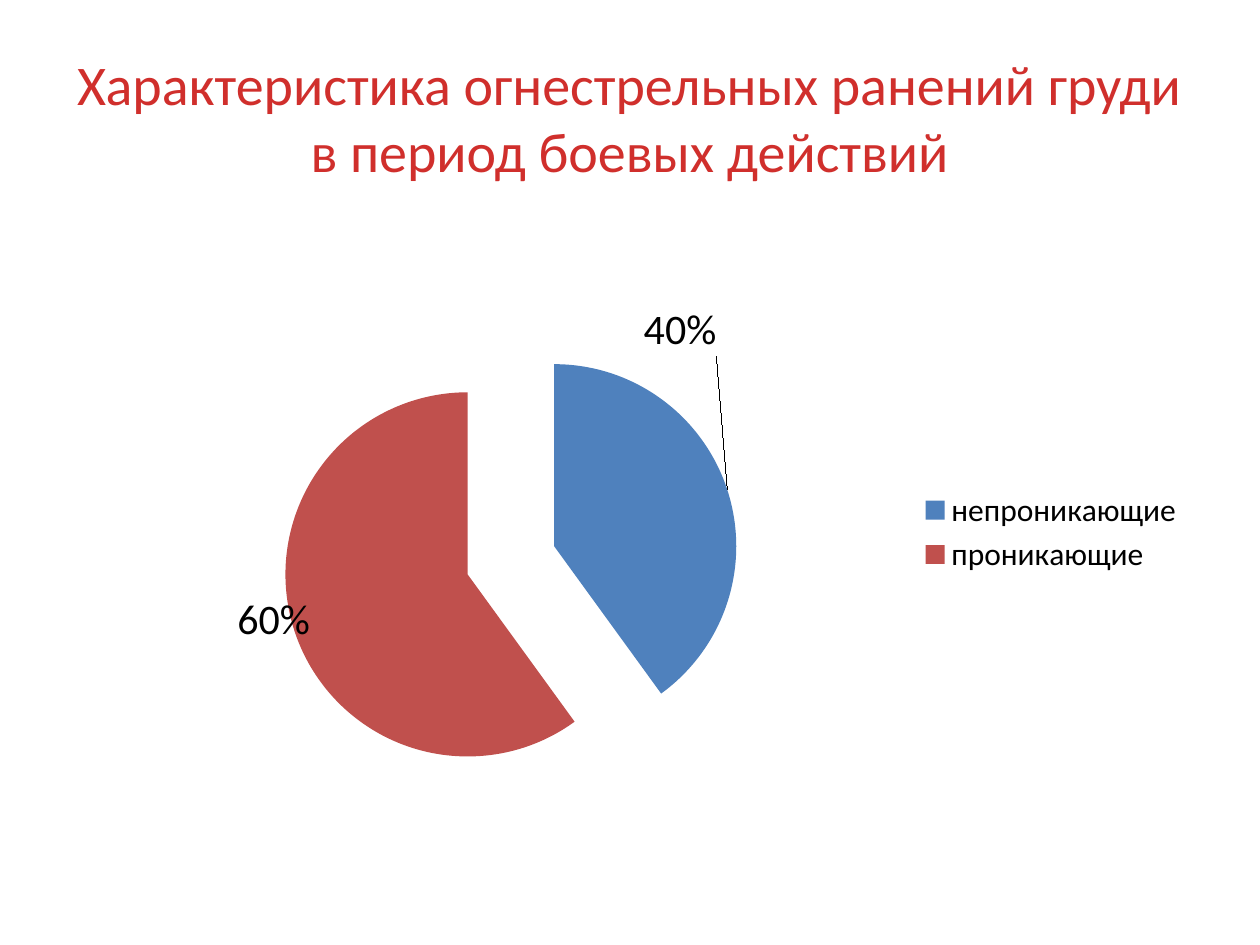
from lxml import etree
from pptx import Presentation, util as u
from pptx.chart.data import CategoryChartData
from pptx.dml.color import RGBColor
from pptx.enum import chart as ch, text
from pptx.oxml import ns


def paint(fill, hue):
    fill.solid()
    fill.fore_color.rgb = RGBColor.from_string(hue)


def place(node, **parts):
    """Fill a c:layout node with a manual layout."""
    man = etree.SubElement(node, ns.qn("c:manualLayout"))
    for tag, val in parts.items():
        etree.SubElement(man, ns.qn("c:" + tag)).set("val", str(val))


prs = Presentation()
prs.slide_width, prs.slide_height = u.Inches(10), u.Inches(7.5)
slide = prs.slides.add_slide(prs.slide_layouts[6])

# Title
box = slide.shapes.add_textbox(u.Inches(0.5), u.Inches(0.3), u.Inches(9), u.Inches(1.25))
frame = box.text_frame
frame.word_wrap = True
frame.vertical_anchor = text.MSO_ANCHOR.MIDDLE
para = frame.paragraphs[0]
para.text = "Характеристика огнестрельных ранений груди в период боевых действий"
para.alignment = text.PP_ALIGN.CENTER
para.font.name, para.font.size = "Calibri", u.Pt(32)
paint(para.font.fill, "D02F2C")

# Pie chart
data = CategoryChartData(number_format="0%")
data.categories = ["непроникающие", "проникающие"]
data.add_series("Series 1", [0.4, 0.6])
chart = slide.shapes.add_chart(
    ch.XL_CHART_TYPE.PIE, u.Inches(0.5), u.Inches(1.75), u.Inches(9), u.Inches(4.95), data
).chart
chart.has_title = False
chart.font.name, chart.font.size = "Calibri", u.Pt(18)
paint(chart.font.fill, "000000")
chart.has_legend = True
chart.legend.position = ch.XL_LEGEND_POSITION.RIGHT
chart.legend.include_in_layout = False

area = chart._chartSpace.chart.plotArea
layout = area.find(ns.qn("c:layout"))
if layout is None:
    layout = etree.Element(ns.qn("c:layout"))
    area.insert(0, layout)
place(layout, layoutTarget="inner", xMode="edge", yMode="edge", x=0.08, y=0.18, w=0.63, h=0.73)

plot = chart.plots[0]
plot.vary_by_categories = True
pie = plot.series[0]
burst = etree.Element(ns.qn("c:explosion"))
burst.set("val", "25")
pie._element.find(ns.qn("c:tx")).addnext(burst)

tags = pie.data_labels
tags.show_value = True
tags.number_format, tags.number_format_is_linked = "0%", False
tags.font.size = u.Pt(24)

# Slice colours and label shifts, as shares of the chart size
slices = [("4F81BD", -0.08, -0.21), ("C0504D", 0.02, -0.06)]
for i, (hue, dx, dy) in enumerate(slices):
    point = pie.points[i]
    paint(point.format.fill, hue)
    label = point.data_label
    label.font.size = u.Pt(24)
    label.position = ch.XL_LABEL_POSITION.OUTSIDE_END
    shift = etree.Element(ns.qn("c:layout"))
    place(shift, x=dx, y=dy)
    node = pie._element.find(ns.qn("c:dLbls")).findall(ns.qn("c:dLbl"))[i]
    node.find(ns.qn("c:idx")).addnext(shift)

prs.save("out.pptx")
